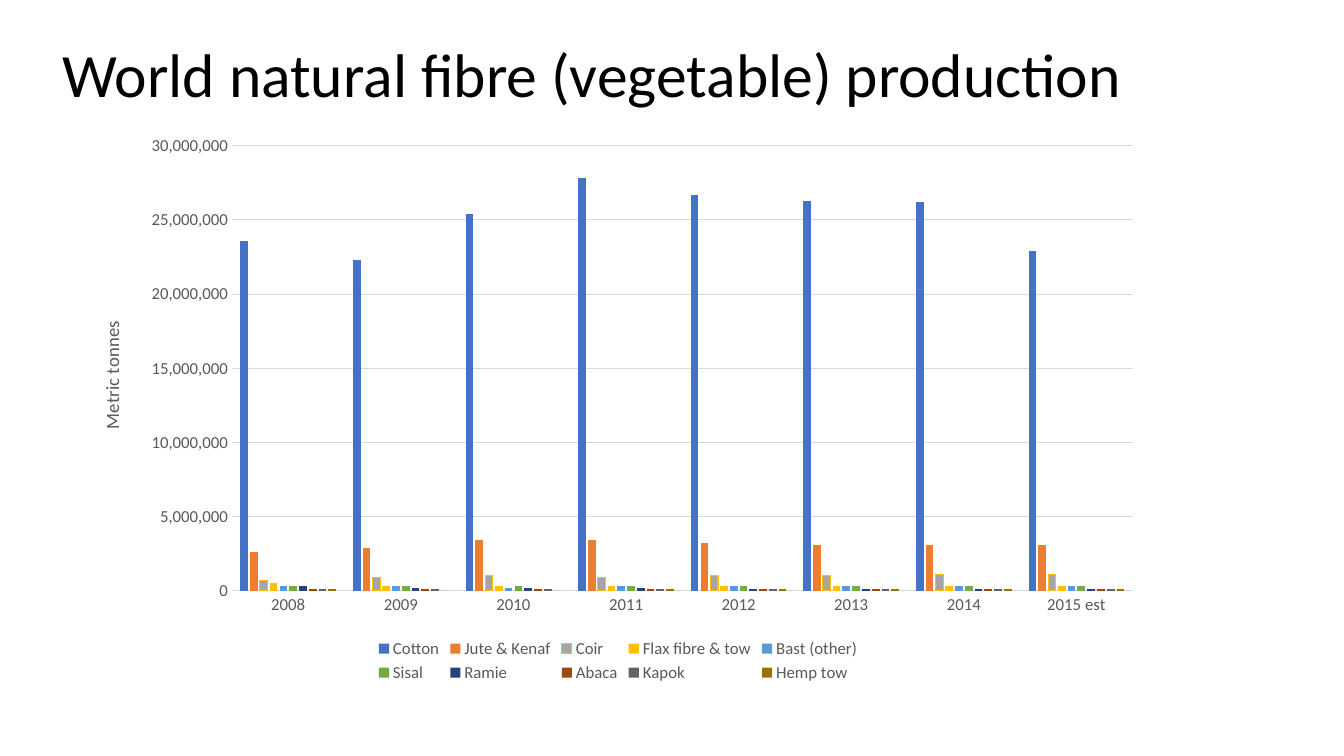
from dataclasses import dataclass
from typing import Optional

import pptx
import pptx.chart.data
import pptx.dml.color
import pptx.enum.chart
import pptx.enum.text
import pptx.oxml
import pptx.oxml.ns
import pptx.util

Pt = pptx.util.Pt
FONT = "Calibri"
COLOURS = {
    "black": "000000",
    "label": "595959",
    "grid": "D9D9D9",
    "blue": "4472C4",
    "orange": "ED7D31",
    "grey": "A5A5A5",
    "gold": "FFC000",
    "sky": "5B9BD5",
    "green": "70AD47",
    "navy": "264478",
    "rust": "9E480E",
    "charcoal": "636363",
    "olive": "997300",
}
YEARS = ["2008", "2009", "2010", "2011", "2012", "2013", "2014", "2015 est"]
PLOT_AREA = {"x": 0.14, "y": 0.04, "w": 0.84, "h": 0.79}
TONNES_PER_UNIT = 100_000


@dataclass
class Fibre:
    name: str
    colour: str
    output: list[int]
    outline: Optional[str] = None


FIBRES = [
    Fibre("Cotton", "blue", [236, 223, 254, 278, 267, 263, 262, 229]),
    Fibre("Jute & Kenaf", "orange", [26, 29, 34, 34, 32, 31, 31, 31]),
    Fibre("Coir", "grey", [7, 9, 10, 9, 10, 10, 11, 11], "gold"),
    Fibre("Flax fibre & tow", "gold", [5] + [3] * 7),
    Fibre("Bast (other)", "sky", [3, 3, 2] + [3] * 5),
    Fibre("Sisal", "green", [3] * 8),
    Fibre("Ramie", "navy", [3, 2, 2, 2, 1, 1, 1, 1]),
    Fibre("Abaca", "rust", [1] * 8),
    Fibre("Kapok", "charcoal", [1] * 8),
    Fibre("Hemp tow", "olive", [1, 0, 0, 1, 1, 1, 1, 1]),
]


def rgb(colour: str) -> pptx.dml.color.RGBColor:
    return pptx.dml.color.RGBColor.from_string(COLOURS[colour])


def set_font(font, size: float, colour: str) -> None:
    font.name = FONT
    font.size = Pt(size)
    font.bold = False
    font.color.rgb = rgb(colour)


def set_line(line, colour: str) -> None:
    line.color.rgb = rgb(colour)
    line.width = Pt(0.75)


def add_heading(slide) -> None:
    heading = slide.shapes.title
    heading.left, heading.top = Pt(37.5), Pt(22.5)
    heading.width, heading.height = Pt(878.5), Pt(65.5)
    heading.text_frame.text = "World natural fibre (vegetable) production"
    heading.text_frame.auto_size = pptx.enum.text.MSO_AUTO_SIZE.NONE
    heading.text_frame.vertical_anchor = pptx.enum.text.MSO_ANCHOR.MIDDLE
    paragraph = heading.text_frame.paragraphs[0]
    paragraph.alignment = pptx.enum.text.PP_ALIGN.LEFT
    paragraph.line_spacing = 0.9
    set_font(paragraph.font, 44, "black")


def add_production_chart(slide):
    production = pptx.chart.data.CategoryChartData(number_format="#,##0")
    production.categories = YEARS
    for fibre in FIBRES:
        production.add_series(fibre.name, [n * TONNES_PER_UNIT for n in fibre.output])
    chart = slide.shapes.add_chart(
        pptx.enum.chart.XL_CHART_TYPE.COLUMN_CLUSTERED,
        Pt(58.5), Pt(88), Pt(766), Pt(402.5), production,
    ).chart
    set_font(chart.font, 10, "black")
    chart.has_title = False
    chart.has_legend = True
    chart.legend.position = pptx.enum.chart.XL_LEGEND_POSITION.BOTTOM
    chart.legend.include_in_layout = False
    set_font(chart.legend.font, 12, "label")
    return chart


def format_columns(plot) -> None:
    plot.gap_width = 219
    plot.overlap = -27
    plot.vary_by_categories = False
    for fibre, columns in zip(FIBRES, plot.series):
        columns.format.fill.solid()
        columns.format.fill.fore_color.rgb = rgb(fibre.colour)
        if fibre.outline:
            set_line(columns.format.line, fibre.outline)
        else:
            columns.format.line.fill.background()


def format_axes(chart) -> None:
    years, tonnes = chart.category_axis, chart.value_axis
    for axis in (years, tonnes):
        axis.major_tick_mark = pptx.enum.chart.XL_TICK_MARK.NONE
        axis.minor_tick_mark = pptx.enum.chart.XL_TICK_MARK.NONE
        set_font(axis.tick_labels.font, 12, "label")
    set_line(years.format.line, "grid")
    tonnes.format.line.fill.background()
    tonnes.minimum_scale = 0
    tonnes.maximum_scale = 30_000_000
    tonnes.major_unit = 5_000_000
    tonnes.has_major_gridlines = True
    set_line(tonnes.major_gridlines.format.line, "grid")
    tonnes.tick_labels.number_format = "#,##0"
    tonnes.tick_labels.number_format_is_linked = False
    unit = tonnes.axis_title.text_frame
    unit.text = "Metric tonnes"
    set_font(unit.paragraphs[0].font, 13.3, "label")


def place_plot_area(chart) -> None:
    plot_area = chart.plots[0]._element.getparent()
    for previous in plot_area.findall(pptx.oxml.ns.qn("c:layout")):
        plot_area.remove(previous)
    modes = '<c:layoutTarget val="inner"/><c:xMode val="edge"/><c:yMode val="edge"/>'
    sizes = "".join(f'<c:{key} val="{share}"/>' for key, share in PLOT_AREA.items())
    plot_area.insert(0, pptx.oxml.parse_xml(
        f'<c:layout {pptx.oxml.ns.nsdecls("c")}>'
        f"<c:manualLayout>{modes}{sizes}</c:manualLayout></c:layout>"
    ))


def main() -> None:
    presentation = pptx.Presentation()
    presentation.slide_width, presentation.slide_height = Pt(960), Pt(540)
    slide = presentation.slides.add_slide(presentation.slide_layouts[5])
    add_heading(slide)
    chart = add_production_chart(slide)
    format_columns(chart.plots[0])
    format_axes(chart)
    place_plot_area(chart)
    presentation.save("out.pptx")


if __name__ == "__main__":
    main()
